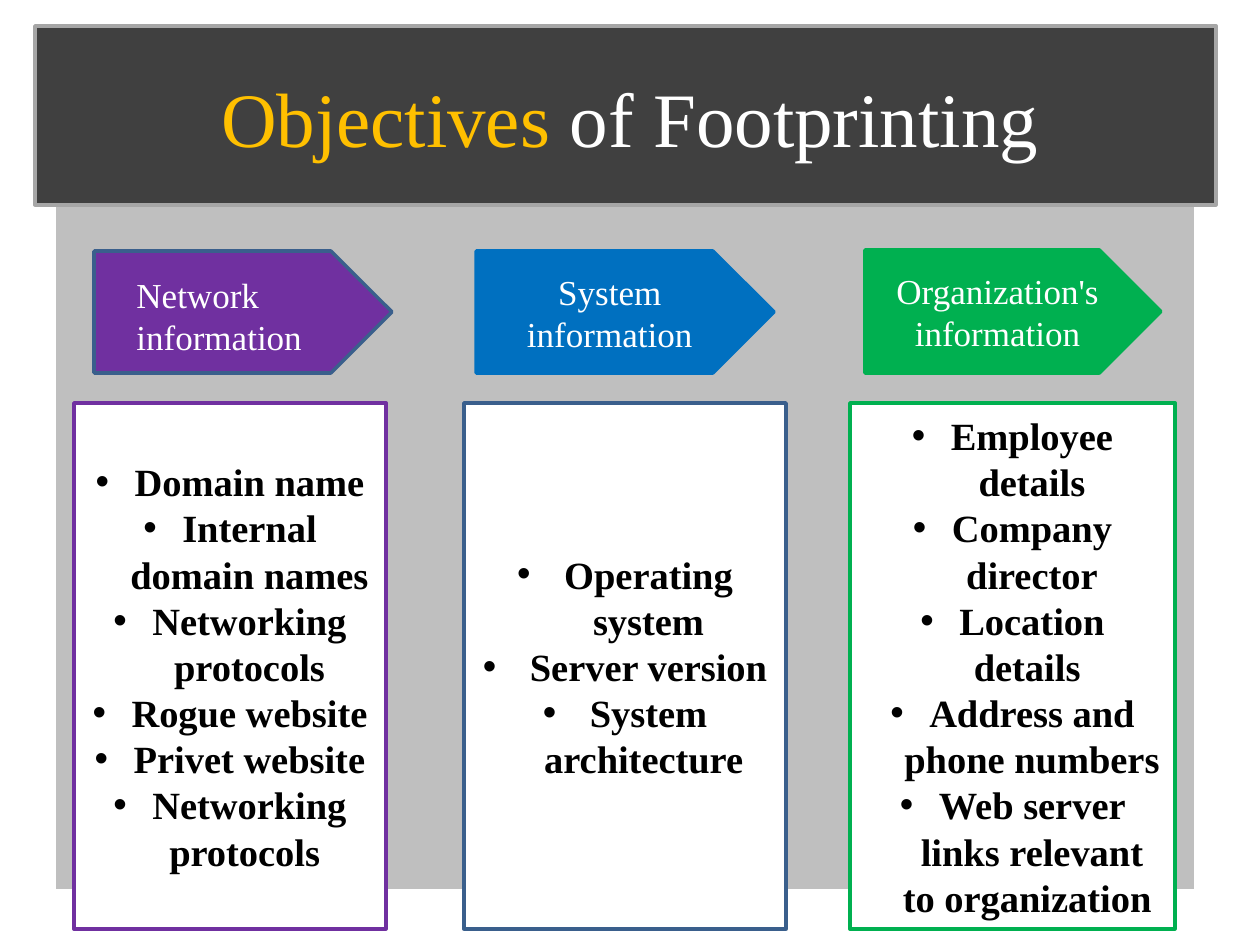
from lxml.etree import SubElement
from pptx import Presentation
from pptx.dml.color import RGBColor
from pptx.enum.shapes import MSO_SHAPE
from pptx.enum.text import MSO_ANCHOR, MSO_AUTO_SIZE, PP_ALIGN
from pptx.oxml.ns import qn
from pptx.util import Emu, Pt

WHITE = RGBColor(0xFF, 0xFF, 0xFF)
BLACK = RGBColor(0, 0, 0)
SILVER = RGBColor(0xBF, 0xBF, 0xBF)
GRAY = RGBColor(0xA6, 0xA6, 0xA6)
CHARCOAL = RGBColor(0x40, 0x40, 0x40)
GOLD = RGBColor(0xFF, 0xC0, 0)
PURPLE = RGBColor(0x70, 0x30, 0xA0)
BLUE = RGBColor(0, 0x70, 0xC0)
GREEN = RGBColor(0, 0xB0, 0x50)
STEEL = RGBColor(0x3A, 0x5F, 0x8C)


def px(length):
    return Emu(round(length * 914400 / 126))


class SlideBuilder:
    font_name = "Times New Roman"
    line_width = Pt(2)

    def __init__(self, page):
        self.page = page

    def style(self, para, size, color=None, bold=False, align=PP_ALIGN.CENTER):
        para.alignment = align
        para.font.name = self.font_name
        para.font.size = Pt(size)
        para.font.bold = bold
        if color is not None:
            para.font.color.rgb = color

    def shape(self, kind, bounds, fill, line):
        box = self.page.shapes.add_shape(kind, *map(px, bounds))
        box.shadow.inherit = False
        box.fill.solid()
        box.fill.fore_color.rgb = fill
        box.line.color.rgb = line
        box.line.width = self.line_width
        box.text_frame.vertical_anchor = MSO_ANCHOR.MIDDLE
        return box

    def title(self, bounds, spans):
        box = self.page.shapes.title
        box.left, box.top, box.width, box.height = map(px, bounds)
        box.text_frame.vertical_anchor = MSO_ANCHOR.MIDDLE
        para = box.text_frame.paragraphs[0]
        self.style(para, 44)
        for text, color in spans:
            span = para.add_run()
            span.text = text
            span.font.color.rgb = color
        # Bring the title in front of its banner
        box.element.getparent().append(box.element)

    def arrow(self, bounds, fill, line, text=""):
        box = self.shape(MSO_SHAPE.PENTAGON, bounds, fill, line)
        if text:
            para = box.text_frame.paragraphs[0]
            para.text = text
            self.style(para, 20, WHITE)

    def label(self, bounds, text):
        box = self.page.shapes.add_textbox(*map(px, bounds))
        frame = box.text_frame
        frame.word_wrap = True
        frame.auto_size = MSO_AUTO_SIZE.SHAPE_TO_FIT_TEXT
        para = frame.paragraphs[0]
        para.text = text
        self.style(para, 20, WHITE, align=PP_ALIGN.LEFT)

    def bullet_panel(self, bounds, line, indent, items):
        frame = self.shape(MSO_SHAPE.RECTANGLE, bounds, WHITE, line).text_frame
        frame.text = "\n".join(items)
        for para in frame.paragraphs:
            self.style(para, 22, BLACK, bold=True)
            properties = para._p.get_or_add_pPr()
            properties.set("marL", str(px(indent)))
            properties.set("indent", str(-px(indent)))
            bullet_font = SubElement(properties, qn("a:buFont"))
            bullet_font.set("typeface", "Arial")
            SubElement(properties, qn("a:buChar")).set("char", "•")
            # The schema wants the run defaults after the bullet
            properties.append(properties.find(qn("a:defRPr")))


def main():
    deck = Presentation()
    deck.slide_width, deck.slide_height = px(1260), px(945)
    builder = SlideBuilder(deck.slides.add_slide(deck.slide_layouts[5]))

    # Backdrop and title banner
    builder.shape(MSO_SHAPE.RECTANGLE, (54, 67, 1142, 824), SILVER, WHITE)
    builder.shape(MSO_SHAPE.RECTANGLE, (35, 26, 1181, 179), CHARCOAL, GRAY)
    builder.title((63, 38, 1134, 158),
                  [("Objectives ", GOLD), ("of Footprinting", WHITE)])

    # Column headings
    builder.arrow((94, 251, 298, 122), PURPLE, STEEL)
    builder.label((124, 267, 218, 97), "Network information")
    builder.arrow((476, 251, 298, 122), BLUE, BLUE, "System information")
    builder.arrow((865, 250, 296, 123), GREEN, GREEN, "Organization's information")

    # Column panels: left, width, outline, indent, items
    panels = [
        (74, 312, PURPLE, 39,
         ["Domain name", "Internal domain names", "Networking protocols",
          "Rogue website", "Privet website", "Networking protocols "]),
        (464, 322, STEEL, 47,
         ["Operating system", "Server version", "System architecture "]),
        (850, 325, GREEN, 39,
         ["Employee details", "Company director", "Location details ",
          "Address and phone numbers ",
          "Web server links relevant to organization "]),
    ]
    for left, width, line, indent, items in panels:
        builder.bullet_panel((left, 403, width, 526), line, indent, items)

    deck.save("out.pptx")


if __name__ == "__main__":
    main()
